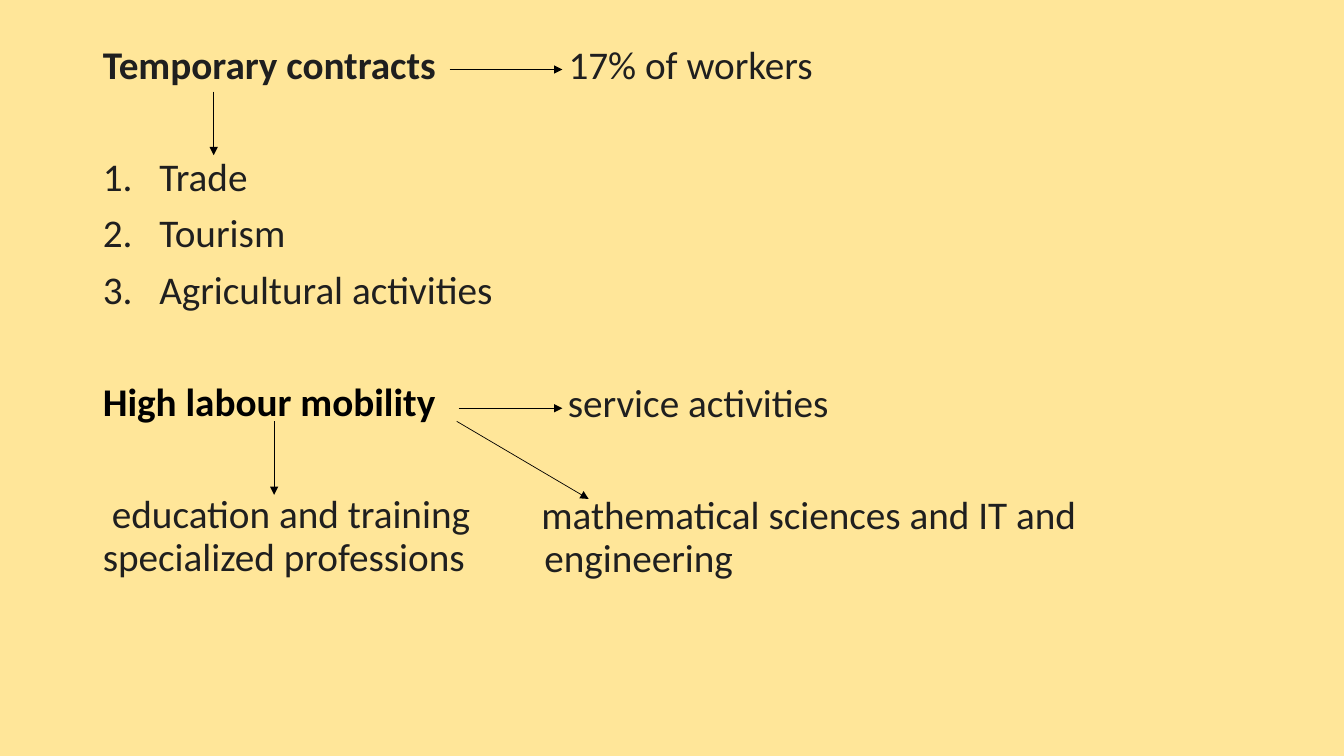
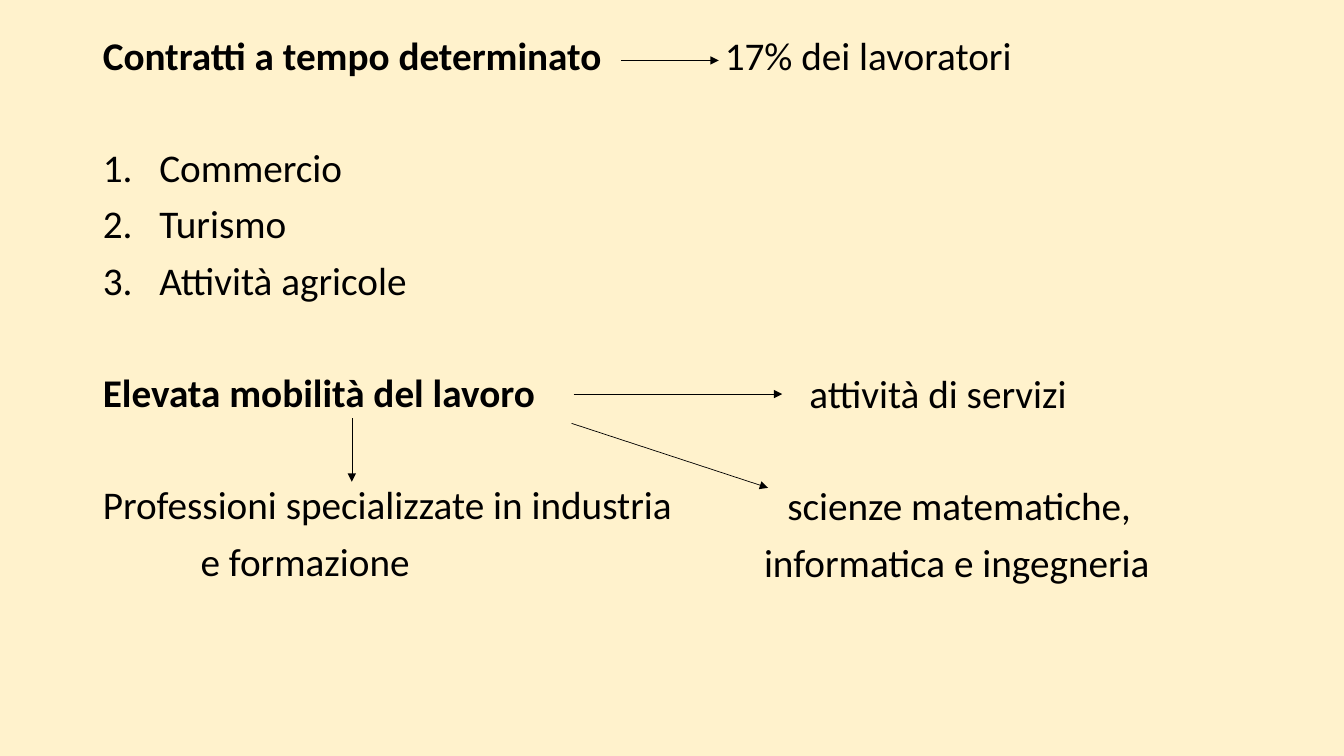
from dataclasses import dataclass

from lxml import etree
from pptx import Presentation
from pptx.dml.color import RGBColor
from pptx.enum.shapes import MSO_CONNECTOR
from pptx.enum.text import MSO_ANCHOR, MSO_AUTO_SIZE
from pptx.oxml.ns import qn
from pptx.util import Inches, Pt

STRAIGHT = MSO_CONNECTOR.STRAIGHT
TOP = MSO_ANCHOR.TOP
NO_AUTOFIT = MSO_AUTO_SIZE.NONE

BLACK = RGBColor(0x00, 0x00, 0x00)
CHARCOAL = RGBColor(0x1F, 0x1F, 0x1F)
GOLD = RGBColor(0xFF, 0xE6, 0x99)
CREAM = RGBColor(0xFF, 0xF2, 0xCC)

FONT = "Calibri"
TEXT_SIZE = Pt(28)
LINE_SPACING = 0.9
LINE_HEIGHT = Pt(30.4)
GAP = Pt(10)
SECTION_GAP = Pt(50)
NUMBER_INDENT = Inches(0.56)
SIDE_INSET = Inches(0.1)
TOP_INSET = Inches(0.05)

SLIDE_WIDTH = Inches(13.33)
SLIDE_HEIGHT = Inches(7.5)
COLUMN = SLIDE_WIDTH / 100
ROW = SLIDE_HEIGHT / 100
BOX_LEFT = 6.9
BOX_WIDTH = 86.25


@dataclass
class Line:
    text: str
    detail: str = ""
    detail_column: float = 0
    indent: float = 0
    heading: bool = False
    numbered: bool = False
    gap: int = GAP
    heading_color: RGBColor = BLACK


def columns(count):
    return round(count * COLUMN)


def rows(count):
    return round(count * ROW)


def prepare_frame(text_frame, side_inset, top_inset):
    text_frame.word_wrap = True
    text_frame.auto_size = NO_AUTOFIT
    text_frame.vertical_anchor = TOP
    text_frame.margin_left = text_frame.margin_right = side_inset
    text_frame.margin_top = text_frame.margin_bottom = top_inset


def write_paragraph(paragraph, text, gap, color, bold=False):
    paragraph.text = text
    paragraph.line_spacing = LINE_SPACING
    paragraph.space_before = gap
    paragraph.space_after = Pt(0)
    for run in paragraph.runs:
        run.font.name = FONT
        run.font.size = TEXT_SIZE
        run.font.bold = bold
        run.font.color.rgb = color


def set_indent(paragraph, line):
    properties = paragraph._p.get_or_add_pPr()
    if line.numbered:
        properties.set("marL", str(NUMBER_INDENT))
        properties.set("indent", str(-NUMBER_INDENT))
        etree.SubElement(properties, qn("a:buFont"), typeface="+mj-lt")
        etree.SubElement(properties, qn("a:buAutoNum"), type="arabicPeriod")
    else:
        properties.set("marL", "0")
        properties.set("indent", str(columns(line.indent)))
        etree.SubElement(properties, qn("a:buNone"))


def write_outline(body, lines, color):
    text_frame = body.text_frame
    prepare_frame(text_frame, SIDE_INSET, TOP_INSET)
    for index, line in enumerate(lines):
        paragraph = text_frame.add_paragraph() if index else text_frame.paragraphs[0]
        line_color = line.heading_color if line.heading else color
        write_paragraph(paragraph, line.text, line.gap, line_color, line.heading)
        set_indent(paragraph, line)


def add_details(slide, body, lines, color):
    top = body.top + TOP_INSET
    for index, line in enumerate(lines):
        if index:
            top += LINE_HEIGHT + line.gap
        if line.detail:
            offset = SIDE_INSET + columns(line.detail_column)
            detail = slide.shapes.add_textbox(
                body.left + offset, top, body.width - offset, LINE_HEIGHT
            )
            prepare_frame(detail.text_frame, 0, 0)
            write_paragraph(detail.text_frame.paragraphs[0], line.detail, Pt(0), color)


def add_arrow(slide, box, start, end):
    points = [
        position
        for x, y in (start, end)
        for position in (box.left + columns(x), box.top + rows(y))
    ]
    arrow = slide.shapes.add_connector(STRAIGHT, *points)
    arrow.line.color.rgb = BLACK
    arrow.line.width = Pt(0.5)
    etree.SubElement(arrow.line._get_or_add_ln(), qn("a:tailEnd"), type="triangle")
    etree.SubElement(arrow._element.spPr, qn("a:effectLst"))


def add_outline_slide(presentation, background, color, top, height, lines, arrows):
    slide = presentation.slides.add_slide(presentation.slide_layouts[1])
    fill = slide.background.fill
    fill.solid()
    fill.fore_color.rgb = background
    title = slide.shapes.title.element
    title.getparent().remove(title)
    body = slide.placeholders[1]
    body.left, body.top = columns(BOX_LEFT), rows(top)
    body.width, body.height = columns(BOX_WIDTH), rows(height)
    write_outline(body, lines, color)
    add_details(slide, body, lines, color)
    for start, end in arrows:
        add_arrow(slide, body, start, end)


def numbered_lines(names):
    return [
        Line(name, numbered=True, gap=GAP if index else SECTION_GAP)
        for index, name in enumerate(names)
    ]


def main():
    presentation = Presentation()
    presentation.slide_width = SLIDE_WIDTH
    presentation.slide_height = SLIDE_HEIGHT

    add_outline_slide(
        presentation, GOLD, CHARCOAL, top=5.33, height=91.87,
        lines=[
            Line("Temporary contracts", "17% of workers", 34.65,
                 heading=True, heading_color=CHARCOAL),
            *numbered_lines(["Trade", "Tourism", "Agricultural activities"]),
            Line("High labour mobility", "service activities", 34.6,
                 heading=True, gap=SECTION_GAP),
            Line("education and training", "mathematical sciences and IT and", 32.63,
                 indent=0.68, gap=SECTION_GAP),
            Line("specialized professions", "engineering", 32.85, gap=Pt(0)),
        ],
        arrows=[
            ((26.55, 3.87), (34.95, 3.87)),
            ((9, 6.8), (9, 15.2)),
            ((27.23, 48.67), (34.95, 48.67)),
            ((13.5, 50.4), (13.5, 60.13)),
            ((27.08, 50.4), (36.9, 60.67)),
        ],
    )
    add_outline_slide(
        presentation, CREAM, BLACK, top=4.13, height=86,
        lines=[
            Line("Contratti a tempo determinato", "17% dei lavoratori", 46.28,
                 heading=True),
            *numbered_lines(["Commercio", "Turismo", "Attività agricole"]),
            Line("Elevata mobilità del lavoro", "attività di servizi", 52.58,
                 heading=True, gap=SECTION_GAP),
            Line("Professioni specializzate in industria", "scienze matematiche,", 50.93,
                 gap=SECTION_GAP),
            Line("e formazione", "informatica e ingegneria", 49.2, indent=7.28),
        ],
        arrows=[
            ((39.3, 3.87), (46.58, 3.87)),
            ((35.78, 48), (51.3, 48)),
            ((19.28, 51.2), (19.28, 59.6)),
            ((35.63, 51.87), (50.25, 60.4)),
        ],
    )
    presentation.save("out.pptx")


if __name__ == "__main__":
    main()
